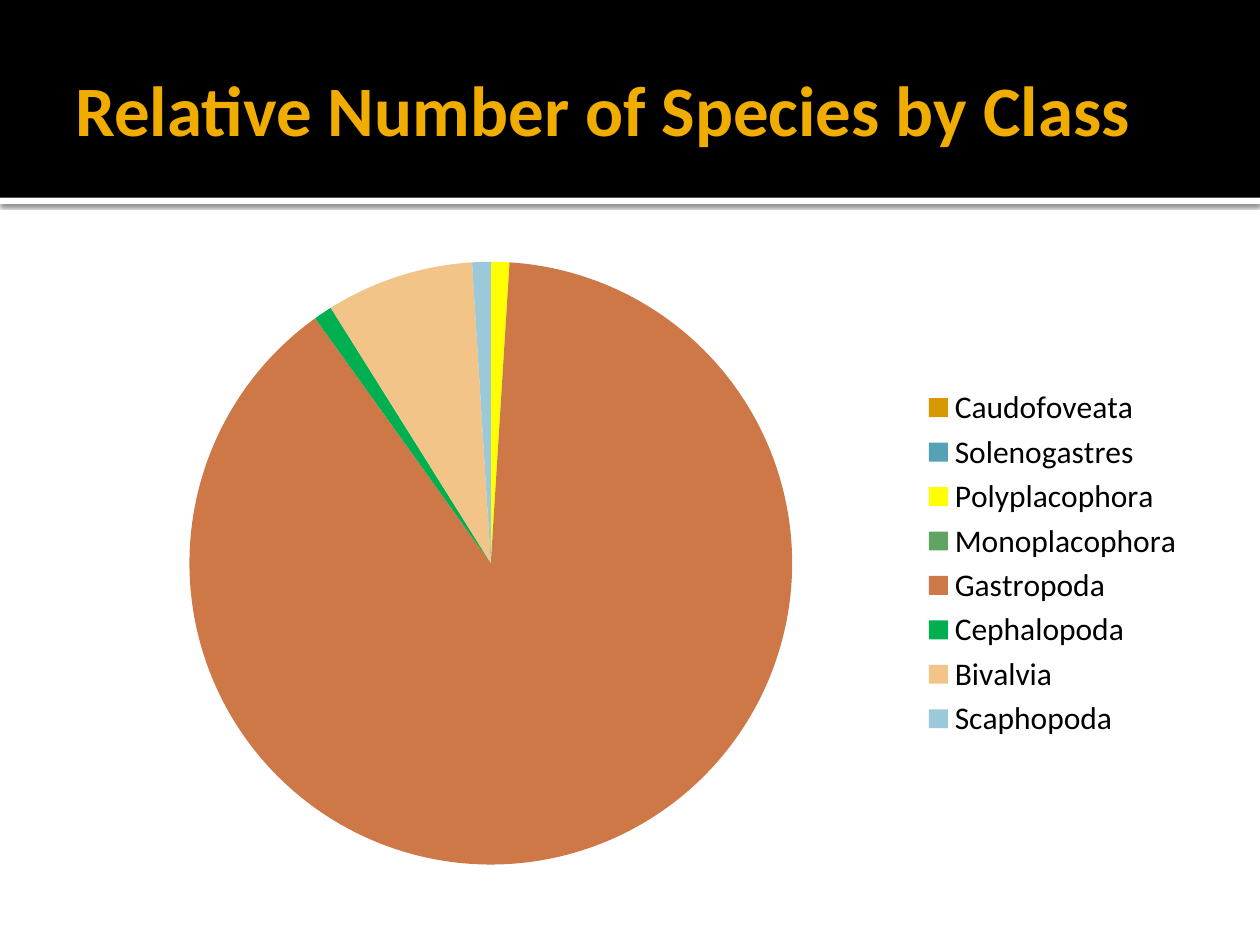
import pptx
import pptx.chart.data
import pptx.dml.color
import pptx.enum.chart
import pptx.enum.shapes
import pptx.enum.text
import pptx.oxml
import pptx.oxml.ns
import pptx.util

Pt = pptx.util.Pt
FONT = "Calibri"
# Class, share of species in percent, slice colour
SHARES = [
    ("Caudofoveata", 0, "D69A00"),
    ("Solenogastres", 0, "55A2B7"),
    ("Polyplacophora", 1, "FFFF00"),
    ("Monoplacophora", 0, "60A462"),
    ("Gastropoda", 90, "CE7848"),
    ("Cephalopoda", 1, "00B050"),
    ("Bivalvia", 8, "F2C488"),
    ("Scaphopoda", 1, "9CC9D9"),
]


def paint(fill, color):
    fill.solid()
    fill.fore_color.rgb = pptx.dml.color.RGBColor.from_string(color)


def style(font, size, color, bold=False):
    font.name = FONT
    font.size = Pt(size)
    font.bold = bold
    paint(font.fill, color)


def add_band(slide, left, top, width, height, color):
    band = slide.shapes.add_shape(
        pptx.enum.shapes.MSO_SHAPE.RECTANGLE,
        Pt(left), Pt(top), Pt(width), Pt(height))
    band.shadow.inherit = False
    paint(band.fill, color)
    band.line.fill.background()
    return band


def cast_shadow(shape):
    """Give the shape a soft shadow straight below it."""
    effects = shape.element.spPr.find(pptx.oxml.ns.qn("a:effectLst"))
    effects.append(pptx.oxml.parse_xml(
        f'<a:outerShdw {pptx.oxml.ns.nsdecls("a")} blurRad="{Pt(2.5)}" '
        f'dist="{Pt(0.8)}" dir="5400000" algn="tl" rotWithShape="0">'
        '<a:srgbClr val="000000"><a:alpha val="60000"/></a:srgbClr>'
        '</a:outerShdw>'))


def add_header(slide, left, top, width, height):
    stripe = add_band(slide, left, top + height, width, 3.6, "FFFFFF")
    cast_shadow(stripe)
    add_band(slide, left, top, width, height, "000000")


def add_title(slide, left, top, width, height, text):
    box = slide.shapes.add_textbox(Pt(left), Pt(top), Pt(width), Pt(height))
    frame = box.text_frame
    frame.word_wrap = True
    frame.vertical_anchor = pptx.enum.text.MSO_ANCHOR.MIDDLE
    frame.margin_left = Pt(7.2)
    frame.margin_right = Pt(3.6)
    frame.text = text
    style(frame.paragraphs[0].runs[0].font, 40.5, "F0AD00", bold=True)


def add_pie(slide, left, top, width, height):
    names, values, colors = zip(*SHARES)
    data = pptx.chart.data.CategoryChartData()
    data.categories = names
    data.add_series("Series 1", values)
    chart = slide.shapes.add_chart(
        pptx.enum.chart.XL_CHART_TYPE.PIE,
        Pt(left), Pt(top), Pt(width), Pt(height), data).chart
    chart.has_title = False
    style(chart.font, 18, "000000")
    chart.has_legend = True
    chart.legend.position = pptx.enum.chart.XL_LEGEND_POSITION.RIGHT
    chart.legend.include_in_layout = False
    plot = chart.plots[0]
    plot.vary_by_categories = True
    for index, color in enumerate(colors):
        slice_format = plot.series[0].points[index].format
        paint(slice_format.fill, color)
        slice_format.line.fill.background()


def main():
    deck = pptx.Presentation()
    deck.slide_width = Pt(720)
    deck.slide_height = Pt(540)
    slide = deck.slides.add_slide(deck.slide_layouts[6])
    add_header(slide, 0, 0, 720, 113)
    add_title(slide, 36, 12.25, 648, 98.65,
              "Relative Number of Species by Class")
    add_pie(slide, 36, 139.7, 648, 364.3)
    deck.save("out.pptx")


if __name__ == "__main__":
    main()
